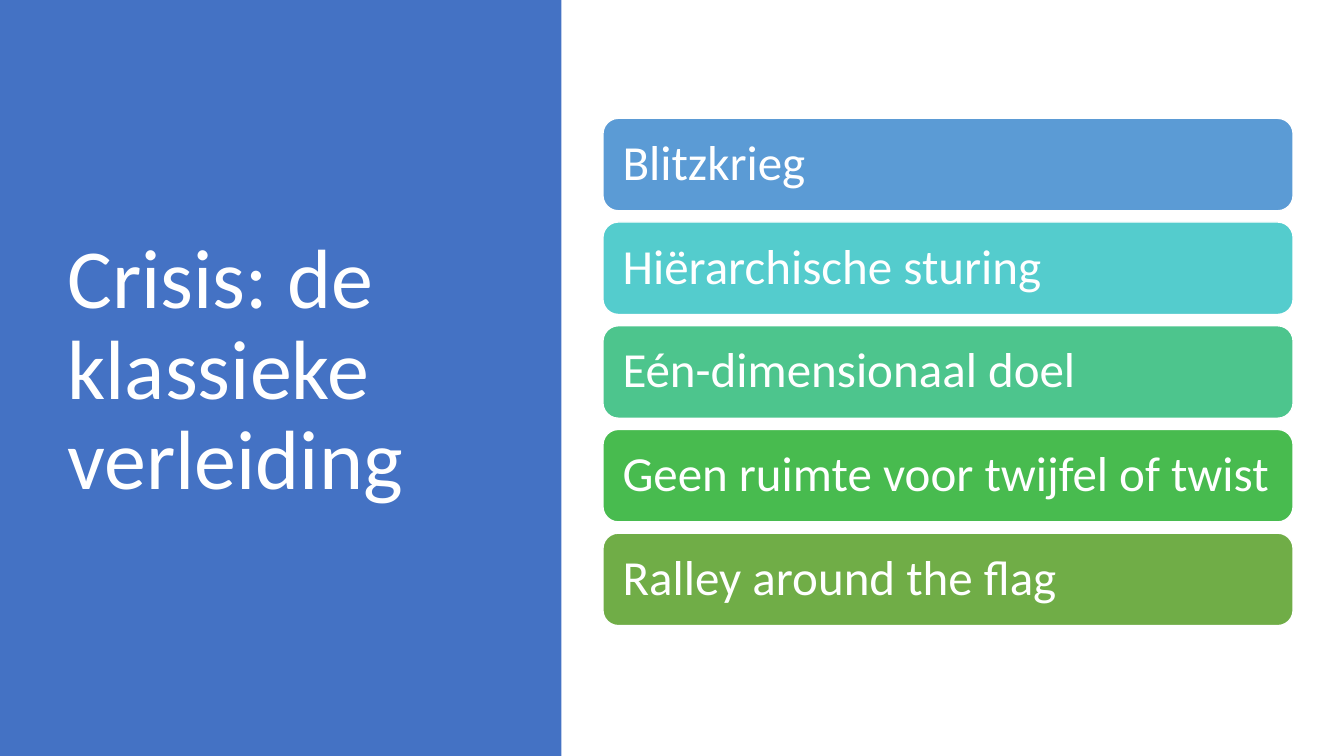
from dataclasses import dataclass

from pptx import Presentation
from pptx.dml.color import RGBColor
from pptx.enum.shapes import MSO_SHAPE
from pptx.enum.text import MSO_ANCHOR, MSO_AUTO_SIZE, PP_ALIGN
from pptx.util import Pt


@dataclass(frozen=True)
class Theme:
    font: str = "Calibri"
    white: str = "FFFFFF"
    panel: str = "4472C4"
    bars: tuple = ("5B9BD5", "54CCCD", "4DC58D", "48BB4F", "70AD47")
    title: int = 60
    body: int = 35


THEME = Theme()
TITLE = "Crisis: de klassieke verleiding"
ITEMS = (
    "Blitzkrieg",
    "Hiërarchische sturing",
    "Eén-dimensionaal doel",
    "Geen ruimte voor twijfel of twist",
    "Ralley around the flag",
)


def apply(target, values):
    for name, value in values.items():
        setattr(target, name, value)


def place(shape, left, top, width, height):
    apply(shape, {"left": Pt(left), "top": Pt(top),
                  "width": Pt(width), "height": Pt(height)})


def write(shape, text, size, inset):
    frame = shape.text_frame
    frame.text = text
    apply(frame, {"word_wrap": True, "auto_size": MSO_AUTO_SIZE.NONE,
                  "vertical_anchor": MSO_ANCHOR.MIDDLE})
    sides = ("left", "top", "right", "bottom")
    apply(frame, {f"margin_{side}": Pt(gap) for side, gap in zip(sides, inset)})
    line = frame.paragraphs[0]
    apply(line, {"alignment": PP_ALIGN.LEFT, "line_spacing": 0.9})
    font = line.runs[0].font
    apply(font, {"name": THEME.font, "size": Pt(size)})
    font.color.rgb = RGBColor.from_string(THEME.white)


def add_box(slide, kind, box, fill):
    shape = slide.shapes.add_shape(kind, *map(Pt, box))
    shape.shadow.inherit = False
    shape.fill.solid()
    shape.fill.fore_color.rgb = RGBColor.from_string(fill)
    return shape


def add_panel(slide, box):
    left, top, width, height = box
    panel = add_box(slide, MSO_SHAPE.RECTANGLE, box, THEME.panel)
    panel.line.fill.background()
    # Title sits in front of the panel
    title = slide.shapes.title
    title.element.addprevious(panel.element)
    place(title, left + 41, top + 49, width - 101.5, height - 106.5)
    write(title, TITLE, THEME.title, (7.2, 3.6, 7.2, 3.6))


def add_bars(slide, box, gap):
    left, top, width, height = box
    tall = (height - gap * (len(ITEMS) - 1)) / len(ITEMS)
    for row, (text, fill) in enumerate(zip(ITEMS, THEME.bars)):
        spot = (left, top + row * (tall + gap), width, tall)
        bar = add_box(slide, MSO_SHAPE.ROUNDED_RECTANGLE, spot, fill)
        bar.line.color.rgb = RGBColor.from_string(THEME.white)
        bar.line.width = Pt(1)
        write(bar, text, THEME.body, (10.8,) * 4)


def main():
    deck = Presentation()
    apply(deck, {"slide_width": Pt(960), "slide_height": Pt(540)})
    slide = deck.slides.add_slide(deck.slide_layouts[5])
    # Left: title panel
    add_panel(slide, (0, 0, 401, 540))
    # Right: stacked bars
    add_bars(slide, (430.7, 84.5, 493, 362.4), 8)
    deck.save("out.pptx")


if __name__ == "__main__":
    main()
